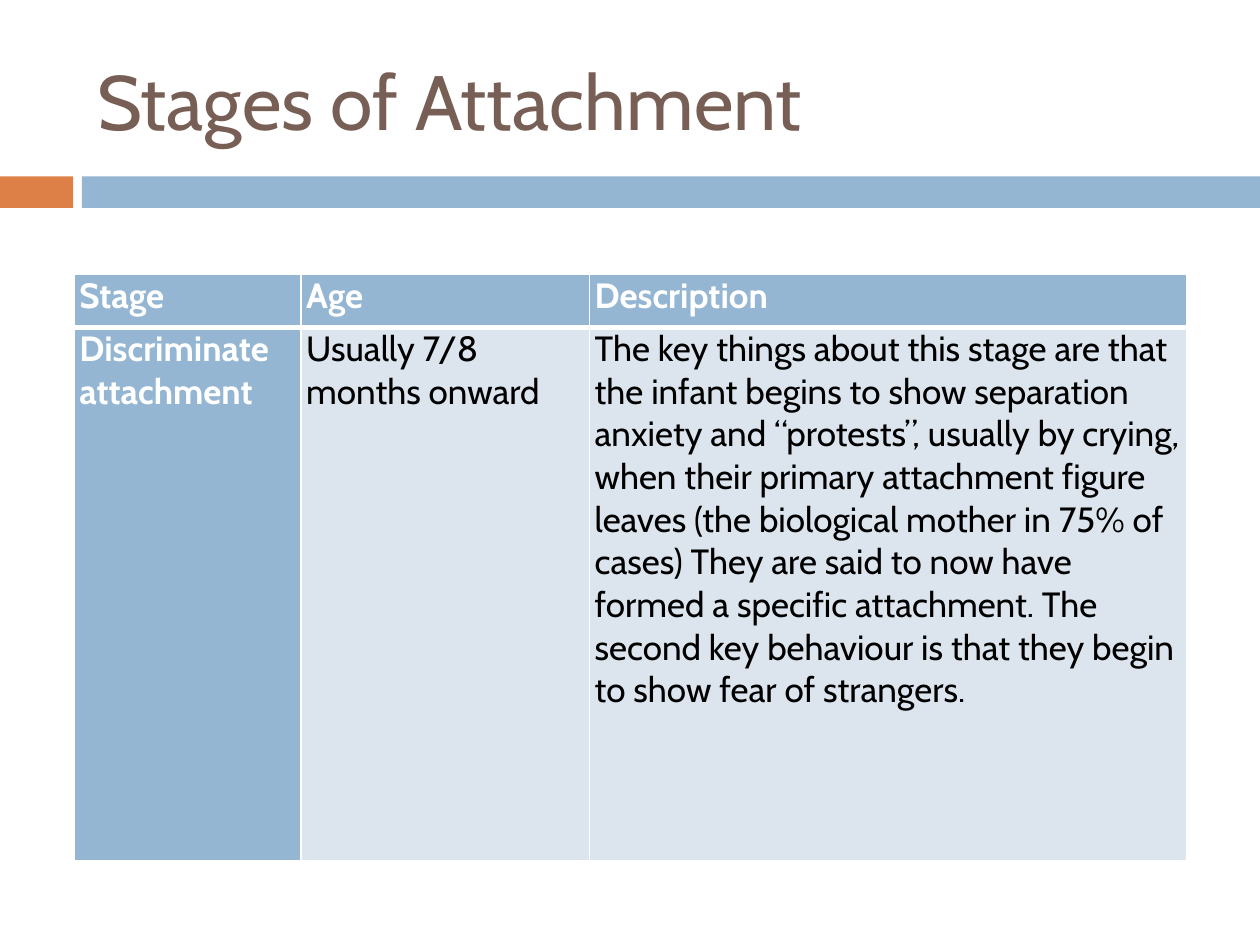
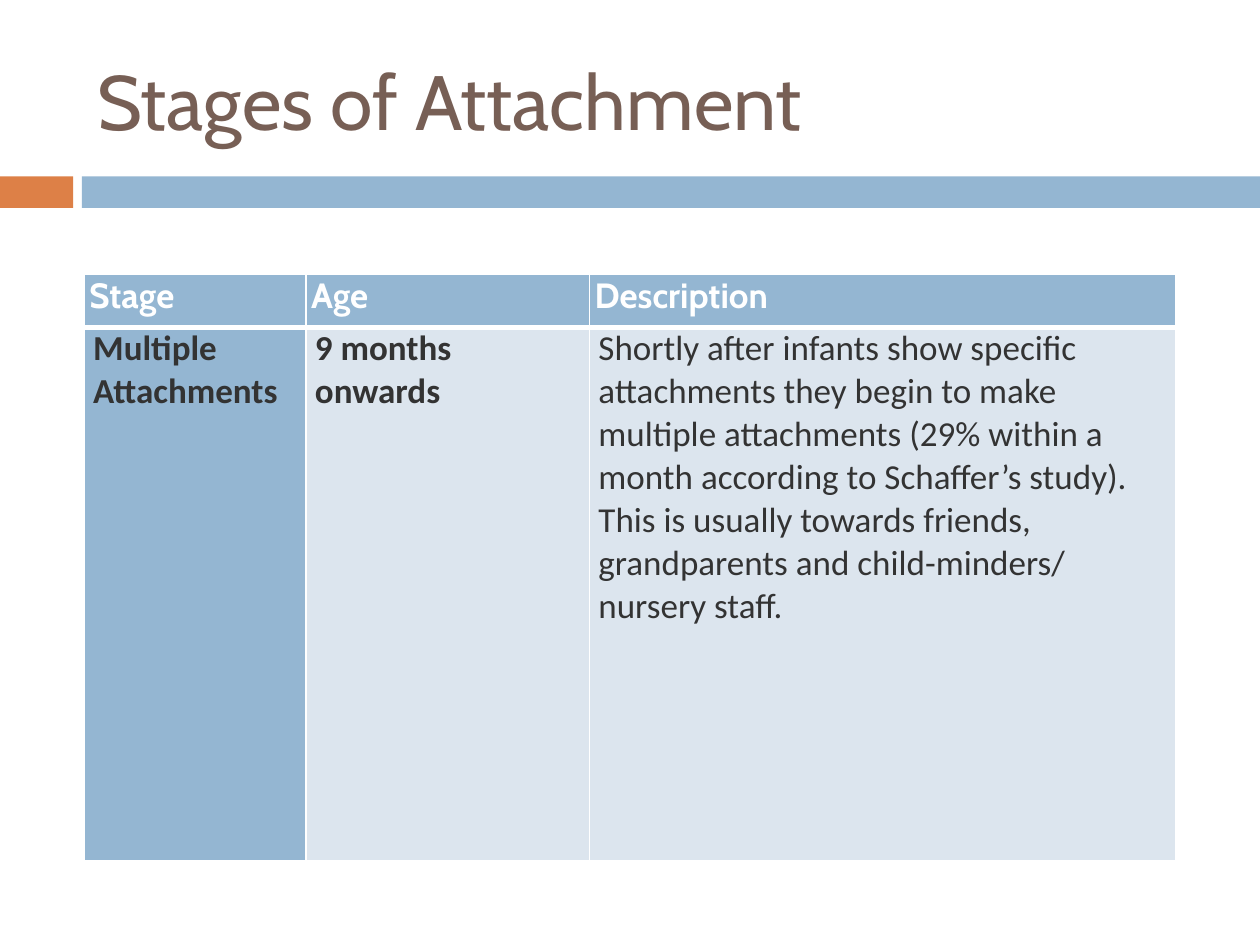
import pptx
import pptx.util
import pptx.dml.color
import pptx.enum.shapes
import pptx.enum.text
import pptx.oxml
import pptx.oxml.ns

Inches, Pt = pptx.util.Inches, pptx.util.Pt

COLORS = {
    "orange": "DD8047",
    "blue": "94B6D2",
    "pale": "DCE5EE",
    "brown": "775F55",
    "white": "FFFFFF",
    "black": "000000",
    "grey": "333333",
}
HEADERS = ["Stage", "Age", "Description"]
ROW_HEIGHTS = [0.42, 4.23]
TABLE_TOP = 2.18
HEADER_INSET = 0.04


def rgb(name):
    return pptx.dml.color.RGBColor.from_string(COLORS[name])


class Deck:
    """Shared style plus the slide being built."""

    def __init__(self):
        self.prs = pptx.Presentation()
        self.prs.slide_width = Inches(10)
        self.prs.slide_height = Inches(7.5)
        self.s = None

    def new_slide(self, title):
        self.s = self.prs.slides.add_slide(self.prs.slide_layouts[5])
        self.band(0, 0.58, "orange")
        self.band(0.65, 9.35, "blue")
        self.title(title)

    def band(self, left, width, color):
        sp = self.s.shapes.add_shape(
            pptx.enum.shapes.MSO_SHAPE.RECTANGLE,
            Inches(left), Inches(1.4), Inches(width), Inches(0.25))
        sp.shadow.inherit = False
        sp.fill.solid()
        sp.fill.fore_color.rgb = rgb(color)
        sp.line.fill.background()

    def style(self, p, size, color, font="Cabin", bold=False):
        for r in p.runs:
            r.font.size = Pt(size)
            r.font.name = font
            r.font.bold = bold
            r.font.color.rgb = rgb(color)

    def title(self, text):
        sp = self.s.shapes.title
        sp.left, sp.top = Inches(0.67), Inches(0.25)
        sp.width, sp.height = Inches(8.92), Inches(1.08)
        tf = sp.text_frame
        tf.text = text
        tf.auto_size = pptx.enum.text.MSO_AUTO_SIZE.NONE
        tf.vertical_anchor = pptx.enum.text.MSO_ANCHOR.MIDDLE
        p = tf.paragraphs[0]
        p.alignment = pptx.enum.text.PP_ALIGN.LEFT
        self.style(p, 44, "brown")

    def borders(self, cell, top, bottom):
        tc_pr = cell._tc.get_or_add_tcPr()
        widths = {"lnL": 1, "lnR": 1, "lnT": top, "lnB": bottom}
        for i, (tag, width) in enumerate(widths.items()):
            tc_pr.insert(i, pptx.oxml.parse_xml(
                f'<a:{tag} {pptx.oxml.ns.nsdecls("a")} w="{Pt(width)}">'
                f'<a:solidFill><a:srgbClr val="{COLORS["white"]}"/></a:solidFill>'
                f'</a:{tag}>'))

    def cell(self, cell, text, fill, inset, **font):
        cell.margin_left = cell.margin_right = Inches(inset)
        cell.margin_top = cell.margin_bottom = 0
        cell.fill.solid()
        cell.fill.fore_color.rgb = rgb(fill)
        p = cell.text_frame.paragraphs[0]
        p.text = text
        p.space_after = Pt(1.5)
        self.style(p, 20, **font)

    def table(self, left, col_widths, body, body_inset, body_fonts):
        tbl = self.s.shapes.add_table(
            2, len(HEADERS), Inches(left), Inches(TABLE_TOP),
            Inches(sum(col_widths)), Inches(sum(ROW_HEIGHTS))).table
        for row, height in zip(tbl.rows, ROW_HEIGHTS):
            row.height = Inches(height)
        for c, width in enumerate(col_widths):
            tbl.columns[c].width = Inches(width)
            head, detail = tbl.cell(0, c), tbl.cell(1, c)
            self.cell(head, HEADERS[c], "blue", HEADER_INSET,
                      color="white", bold=True)
            self.cell(detail, body[c], "pale" if c else "blue", body_inset,
                      **body_fonts[c])
            self.borders(head, 1, 3)
            self.borders(detail, 3, 1)


def main():
    deck = Deck()

    # Discriminate attachment
    deck.new_slide("Stages of Attachment")
    plain = {"color": "black"}
    deck.table(
        0.59, [1.8, 2.29, 4.74],
        ["Discriminate attachment",
         "Usually 7/8 months onward",
         "The key things about this stage are that the infant begins to show "
         "separation anxiety and “protests”, usually by crying, when their "
         "primary attachment figure leaves (the biological mother in 75% of "
         "cases) They are said to now have formed a specific attachment. The "
         "second key behaviour is that they begin to show fear of strangers."],
        HEADER_INSET, [{"color": "white", "bold": True}, plain, plain])

    # Multiple attachments
    deck.new_slide("Stages of Attachment")
    plain = {"color": "grey", "font": "Calibri"}
    strong = {**plain, "bold": True}
    deck.table(
        0.67, [1.76, 2.25, 4.65],
        ["Multiple Attachments",
         "9 months onwards",
         "Shortly after infants show specific attachments they begin to make "
         "multiple attachments (29% within a month according to Schaffer’s "
         "study). This is usually towards friends, grandparents and "
         "child-minders/ nursery staff."],
        0.07, [strong, strong, plain])

    deck.prs.save("out.pptx")


if __name__ == "__main__":
    main()
